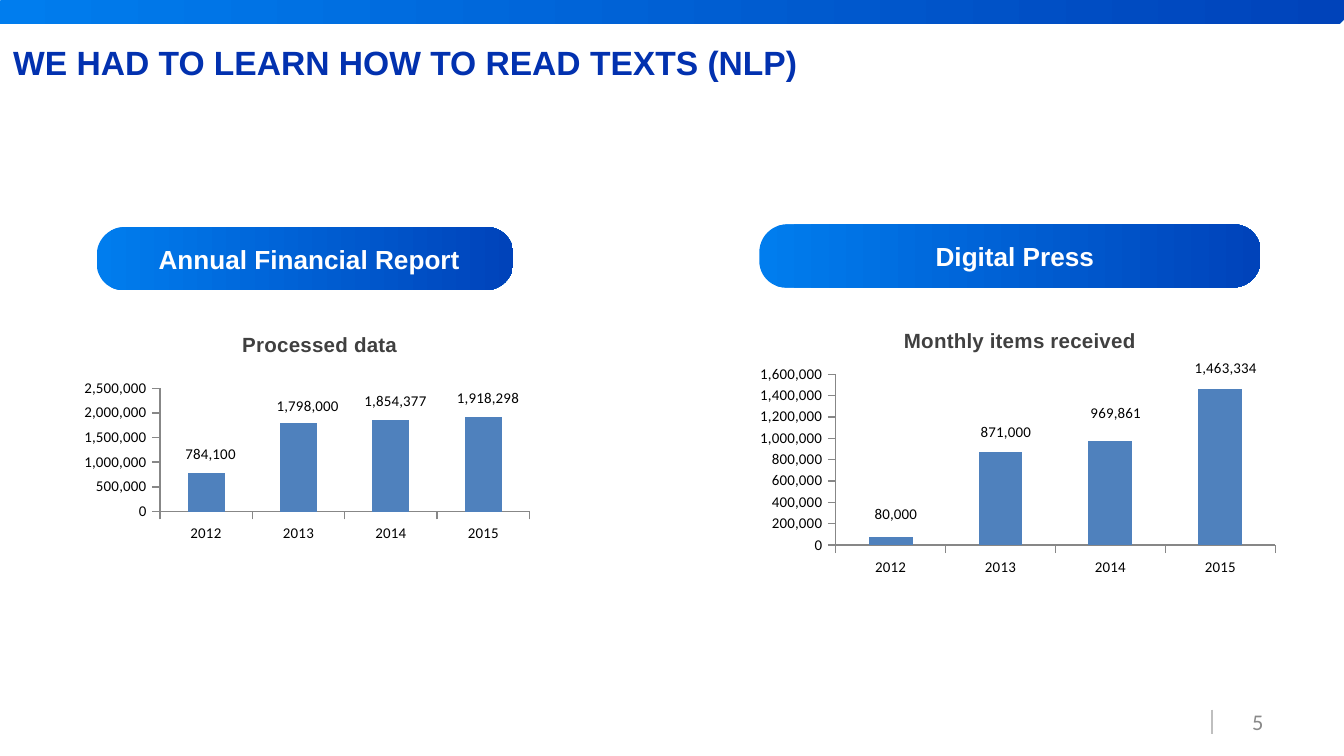
import pptx
import pptx.chart.data
import pptx.dml.color
import pptx.enum.chart
import pptx.enum.shapes
import pptx.enum.text
import pptx.oxml
import pptx.oxml.ns
import pptx.util

Inches = pptx.util.Inches
Pt = pptx.util.Pt
RGBColor = pptx.dml.color.RGBColor
Align = pptx.enum.text.PP_ALIGN
Anchor = pptx.enum.text.MSO_ANCHOR

BRIGHT_BLUE = RGBColor(0x00, 0x7D, 0xEE)
DEEP_BLUE = RGBColor(0x00, 0x43, 0xBA)
TITLE_BLUE = RGBColor(0x02, 0x31, 0xAF)
BAR_BLUE = RGBColor(0x4F, 0x81, 0xBD)
WHITE = RGBColor(0xFF, 0xFF, 0xFF)
BLACK = RGBColor(0x00, 0x00, 0x00)
DARK_GRAY = RGBColor(0x40, 0x40, 0x40)
AXIS_GRAY = RGBColor(0x87, 0x87, 0x87)
NUMBER_GRAY = RGBColor(0x89, 0x89, 0x89)
RULE_GRAY = RGBColor(0xBF, 0xBF, 0xBF)

YEARS = ["2012", "2013", "2014", "2015"]


def style_font(font, size, color, name="Arial", bold=False):
    font.size, font.name, font.bold = Pt(size), name, bold
    font.color.rgb = color


def add_text(page, box, text, size, color, name="Arial", bold=False,
             align=Align.LEFT, anchor=Anchor.MIDDLE):
    frame = page.shapes.add_textbox(*map(Inches, box)).text_frame
    frame.word_wrap = True
    frame.vertical_anchor = anchor
    para = frame.paragraphs[0]
    para.alignment = align
    span = para.add_run()
    span.text = text
    style_font(span.font, size, color, name, bold)


def add_gradient_bar(page, box, corners):
    bar = page.shapes.add_shape(
        pptx.enum.shapes.MSO_SHAPE.ROUND_2_DIAG_RECTANGLE, *map(Inches, box))
    bar.shadow.inherit = False
    bar.adjustments[0], bar.adjustments[1] = corners
    bar.line.fill.background()
    bar.fill.gradient()
    bar.fill.gradient_angle = 0
    for stop, color, position in zip(bar.fill.gradient_stops, (BRIGHT_BLUE, DEEP_BLUE), (0, 1)):
        stop.color.rgb = color
        stop.position = position


def set_layout(parent, index, edge=False, inner=False, **fractions):
    """Give a chart part a manual layout, in fractions of the chart."""
    for old in parent.findall(pptx.oxml.ns.qn("c:layout")):
        parent.remove(old)
    parts = '<c:layoutTarget val="inner"/>' if inner else ""
    if edge:
        parts += '<c:xMode val="edge"/><c:yMode val="edge"/>'
    parts += "".join(f'<c:{key} val="{value}"/>' for key, value in fractions.items())
    parent.insert(index, pptx.oxml.parse_xml(
        f'<c:layout {pptx.oxml.ns.nsdecls("c")}><c:manualLayout>{parts}'
        "</c:manualLayout></c:layout>"))


def add_heading_pill(page, box, text):
    left, top, width, height = box
    add_gradient_bar(page, box, (0.44, 0.42))
    add_text(page, (left + 0.11 * width, top + 0.07, 0.8 * width, 0.21), text, 14, WHITE,
             bold=True, align=Align.CENTER, anchor=Anchor.TOP)


def add_bar_chart(page, box, title, values, plot, title_corner, label_shifts):
    data = pptx.chart.data.CategoryChartData(number_format="#,##0")
    data.categories = YEARS
    data.add_series("Series 1", values)
    chart = page.shapes.add_chart(
        pptx.enum.chart.XL_CHART_TYPE.COLUMN_CLUSTERED, *map(Inches, box), data).chart
    style_font(chart.font, 10, BLACK, "Calibri")
    chart.has_legend = False

    # Chart title
    chart.has_title = True
    span = chart.chart_title.text_frame.paragraphs[0].add_run()
    span.text = title
    style_font(span.font, 11, DARK_GRAY, bold=True)
    set_layout(chart.chart_title._element, 1, edge=True, **dict(zip("xy", title_corner)))

    # Axes
    for axis in (chart.category_axis, chart.value_axis):
        axis.has_major_gridlines = False
        axis.major_tick_mark = pptx.enum.chart.XL_TICK_MARK.OUTSIDE
        axis.format.line.color.rgb = AXIS_GRAY
        axis.format.line.width = Pt(0.75)
        style_font(axis.tick_labels.font, 8, BLACK, "Calibri")
    chart.value_axis.tick_labels.number_format = "#,##0"
    chart.value_axis.tick_labels.number_format_is_linked = False

    # Bars
    bars = chart.plots[0]
    bars.gap_width = 150
    bars.vary_by_categories = False
    series = bars.series[0]
    series.format.fill.solid()
    series.format.fill.fore_color.rgb = BAR_BLUE
    set_layout(chart._chartSpace.chart.plotArea, 0, edge=True, inner=True,
               **dict(zip("xywh", plot)))

    # Shifted value labels without leader lines
    labels = series.data_labels
    labels.show_value = True
    style_font(labels.font, 8, BLACK, "Calibri")
    for leader in labels._element.findall(pptx.oxml.ns.qn("c:showLeaderLines")):
        leader.set("val", "0")
    labels._element.append(pptx.oxml.parse_xml(
        f'<c:extLst {pptx.oxml.ns.nsdecls("c")}>'
        '<c:ext uri="{CE6537A1-D6FC-4f65-9D91-7224C49458BB}" '
        'xmlns:c15="http://schemas.microsoft.com/office/drawing/2012/chart">'
        '<c15:showLeaderLines val="0"/></c:ext></c:extLst>'))
    for index, (x, y) in enumerate(label_shifts):
        label = series.points[index].data_label
        style_font(label.font, 8, BLACK, "Calibri")
        label.position = pptx.enum.chart.XL_LABEL_POSITION.OUTSIDE_END
        set_layout(label._dLbl, 1, x=x, y=y)


def add_page_frame(page, number):
    # Top band, then the page number with its rule
    add_gradient_bar(page, (-0.01, -0.02, 10.01, 0.2), (0.29, 0))
    rule = page.shapes.add_connector(
        pptx.enum.shapes.MSO_CONNECTOR.STRAIGHT, *map(Inches, (9.02, 5.28, 9.02, 5.46)))
    rule.line.color.rgb = RULE_GRAY
    rule.line.width = Pt(1)
    rule._element.spPr.append(
        pptx.oxml.parse_xml(f'<a:effectLst {pptx.oxml.ns.nsdecls("a")}/>'))
    add_text(page, (8.88, 5.22, 0.62, 0.3), number, 12, NUMBER_GRAY, "Calibri",
             align=Align.RIGHT)


def main():
    deck = pptx.Presentation()
    deck.slide_width = Inches(10)
    deck.slide_height = deck.slide_width * 9 // 16
    page = deck.slides.add_slide(deck.slide_layouts[6])

    add_page_frame(page, "5")
    add_text(page, (0, 0.23, 9, 0.47), "WE HAD TO LEARN HOW TO READ TEXTS (NLP)",
             18, TITLE_BLUE, bold=True)

    # Left: reports
    add_heading_pill(page, (0.72, 1.69, 3.1, 0.47), "Annual Financial Report")
    add_bar_chart(page, (0.57, 2.43, 3.44, 1.64), "Processed data",
                  (784100, 1798000, 1854377, 1918298),
                  plot=(0.18, 0.28, 0.8, 0.56), title_corner=(0.35, 0),
                  label_shifts=((0.01, -0.02), (0.02, -0.01), (0.01, -0.02), (0.01, -0.02)))

    # Right: press
    add_heading_pill(page, (5.65, 1.67, 3.73, 0.47), "Digital Press")
    add_bar_chart(page, (5.58, 2.3, 3.99, 2.02), "Monthly items received",
                  (80000, 871000, 969861, 1463334),
                  plot=(0.16, 0.24, 0.82, 0.63), title_corner=(0.28, 0.05),
                  label_shifts=((0.01, -0.03), (0.01, -0.02), (0.01, -0.05), (0.01, -0.02)))

    deck.save("out.pptx")


if __name__ == "__main__":
    main()
